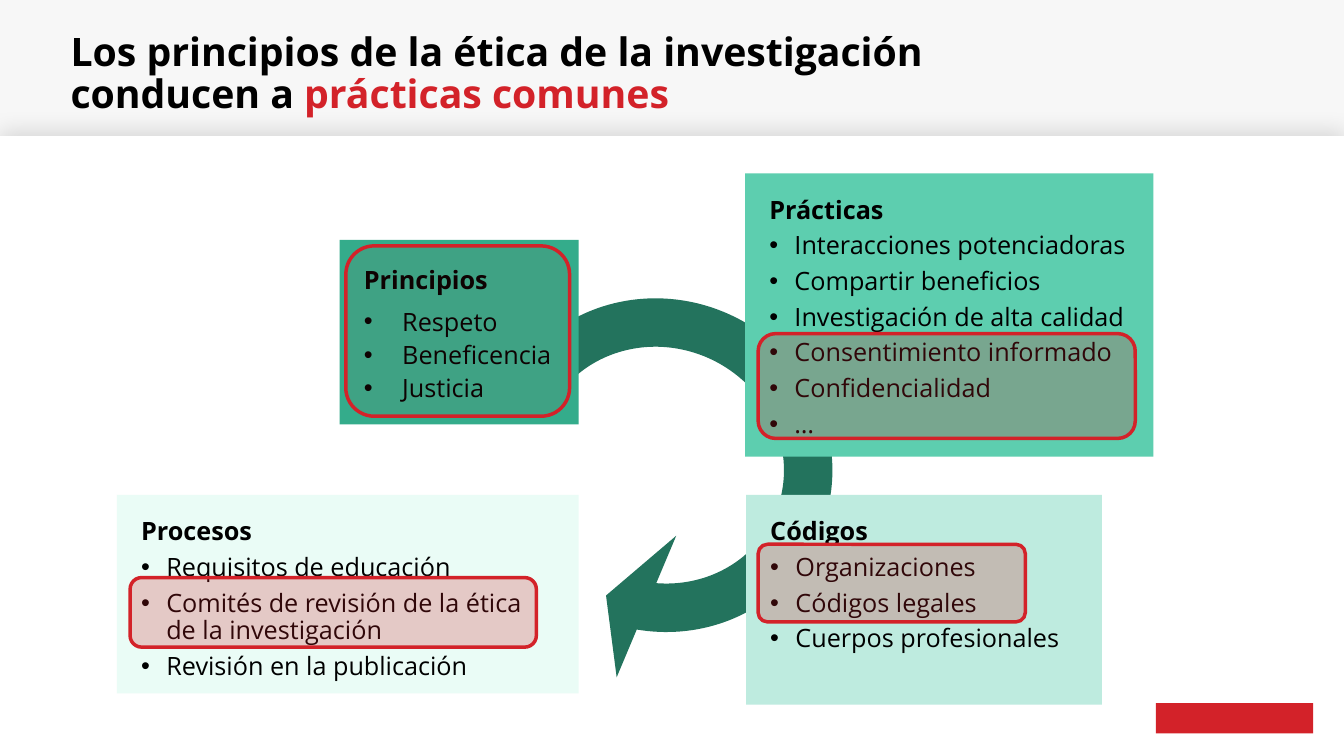
from dataclasses import dataclass

from lxml.etree import SubElement
from pptx import Presentation
from pptx.dml.color import RGBColor
from pptx.enum.shapes import MSO_SHAPE
from pptx.enum.text import MSO_ANCHOR, MSO_AUTO_SIZE, PP_ALIGN
from pptx.oxml.ns import qn
from pptx.util import Inches, Pt


@dataclass(frozen=True)
class Theme:
    font: str = "Open Sans"
    ink: str = "000000"
    red: str = "D32229"
    white: str = "FFFFFF"
    head: str = "F7F7F7"
    arrow: str = "23735D"
    deep: str = "34AC8B"
    mid: str = "5DCEAF"
    soft: str = "BEEBDF"
    pale: str = "EAFCF6"
    title: int = 28
    body: int = 18
    line: float = 2.5


class Board:
    def __init__(self, deck, theme):
        self.deck = deck
        self.theme = theme
        self.slide = deck.slides.add_slide(deck.slide_layouts[5])
        self.shapes = self.slide.shapes

    def place(self, area):
        left, top, width, height = area
        wide, high = self.deck.slide_width, self.deck.slide_height
        return [round(part * size / 100) for part, size in
                ((left, wide), (top, high), (width, wide), (height, high))]

    def run(self, para, text, size, color=None, bold=False):
        run = para.add_run()
        run.text = text
        run.font.name = self.theme.font
        run.font.size = Pt(size)
        run.font.bold = bold
        run.font.color.rgb = RGBColor.from_string(color or self.theme.ink)

    def shape(self, area, color, kind=MSO_SHAPE.RECTANGLE):
        shape = self.shapes.add_shape(kind, *self.place(area))
        shape.shadow.inherit = False
        shape.fill.solid()
        shape.fill.fore_color.rgb = RGBColor.from_string(color)
        shape.line.fill.background()
        return shape

    def panel(self, area):
        panel = self.shape(area, self.theme.white)
        effects = panel.element.spPr.find(qn("a:effectLst"))
        shade = SubElement(effects, qn("a:outerShdw"), blurRad=str(Pt(16)),
                           dist=str(Pt(3)), dir=str(279 * 60000), rotWithShape="0")
        tint = SubElement(shade, qn("a:srgbClr"), val=self.theme.ink)
        SubElement(tint, qn("a:alpha"), val="12000")

    def title(self, area, parts):
        title = self.shapes.title
        title.left, title.top, title.width, title.height = self.place(area)
        self.shapes.element.append(title.element)
        frame = title.text_frame
        frame.word_wrap = True
        frame.auto_size = MSO_AUTO_SIZE.NONE
        frame.vertical_anchor = MSO_ANCHOR.MIDDLE
        para = frame.paragraphs[0]
        para.alignment = PP_ALIGN.LEFT
        para.line_spacing = 0.9
        for text, color in parts:
            self.run(para, text, self.theme.title, color, True)

    def arrow(self, area, turn, bends):
        arrow = self.shape(area, self.theme.arrow, MSO_SHAPE.CIRCULAR_ARROW)
        arrow.rotation = turn
        for index, bend in enumerate(bends):
            arrow.adjustments[index] = bend

    def card(self, area, color, head, items, anchor=MSO_ANCHOR.TOP,
             space=0.9, after=6, indent=0.25):
        frame = self.shape(area, color).text_frame
        frame.word_wrap = True
        frame.vertical_anchor = anchor
        frame.margin_left = frame.margin_right = Inches(0.24)
        frame.margin_top = frame.margin_bottom = Inches(0.24)
        for index, text in enumerate([head, *items]):
            para = frame.add_paragraph() if index else frame.paragraphs[0]
            para.alignment = PP_ALIGN.LEFT
            para.line_spacing = space
            para.space_after = Pt(after if index else 6)
            if index:
                self.bullet(para, indent)
            self.run(para, text, self.theme.body, bold=not index)

    def bullet(self, para, indent):
        props = para._p.get_or_add_pPr()
        props.set("marL", str(Inches(indent)))
        props.set("indent", str(-Inches(indent)))
        SubElement(props, qn("a:buFont"), typeface="Arial")
        SubElement(props, qn("a:buChar"), char="•")

    def mark(self, area, alpha=23, curve=0.167):
        mark = self.shape(area, self.theme.red, MSO_SHAPE.ROUNDED_RECTANGLE)
        mark.adjustments[0] = curve
        tint = mark.element.spPr.find(qn("a:solidFill")).find(qn("a:srgbClr"))
        SubElement(tint, qn("a:alpha"), val=str(alpha * 1000))
        mark.line.color.rgb = RGBColor.from_string(self.theme.red)
        mark.line.width = Pt(self.theme.line)


def main():
    deck = Presentation()
    deck.slide_width, deck.slide_height = Inches(13.33), Inches(7.5)
    theme = Theme()
    board = Board(deck, theme)

    board.shape((0, 0, 100, 77), theme.head)
    board.panel((0, 18, 100, 82))
    board.shape((86, 93, 11.7, 4), theme.red)
    board.arrow((32.93, 31.73, 32.48, 59.6), 114.4,
                (0.111, 10.197, 204.853, 62.763, 0.176))
    board.title((4.5, 1.87, 68.27, 16.13), (
        ("Los principios de la ética de la investigación conducen a ", theme.ink),
        ("prácticas comunes", theme.red)))

    board.card((25.28, 31.73, 17.78, 24.4), theme.deep, "Principios",
               ("Respeto", "Beneficencia", "Justicia"),
               anchor=MSO_ANCHOR.MIDDLE, space=1.1, after=0, indent=0.38)
    board.card((55.44, 22.93, 30.38, 37.47), theme.mid, "Prácticas",
               ("Interacciones potenciadoras", "Compartir beneficios",
                "Investigación de alta calidad", "Consentimiento informado",
                "Confidencialidad", "…"))
    board.card((55.51, 65.47, 26.48, 27.73), theme.soft, "Códigos",
               ("Organizaciones", "Códigos legales", "Cuerpos profesionales"))
    board.card((8.7, 65.47, 34.36, 26.27), theme.pale, "Procesos",
               ("Requisitos de educación",
                "Comités de revisión de la ética de la investigación",
                "Revisión en la publicación"))

    board.mark((56.41, 44.13, 28.06, 13.87))
    board.mark((9.68, 76.4, 30.23, 9.2))
    board.mark((56.41, 72, 19.88, 10.27), curve=0.121)
    board.mark((25.73, 32.53, 16.65, 22.53), alpha=7)
    deck.save("out.pptx")


if __name__ == "__main__":
    main()
